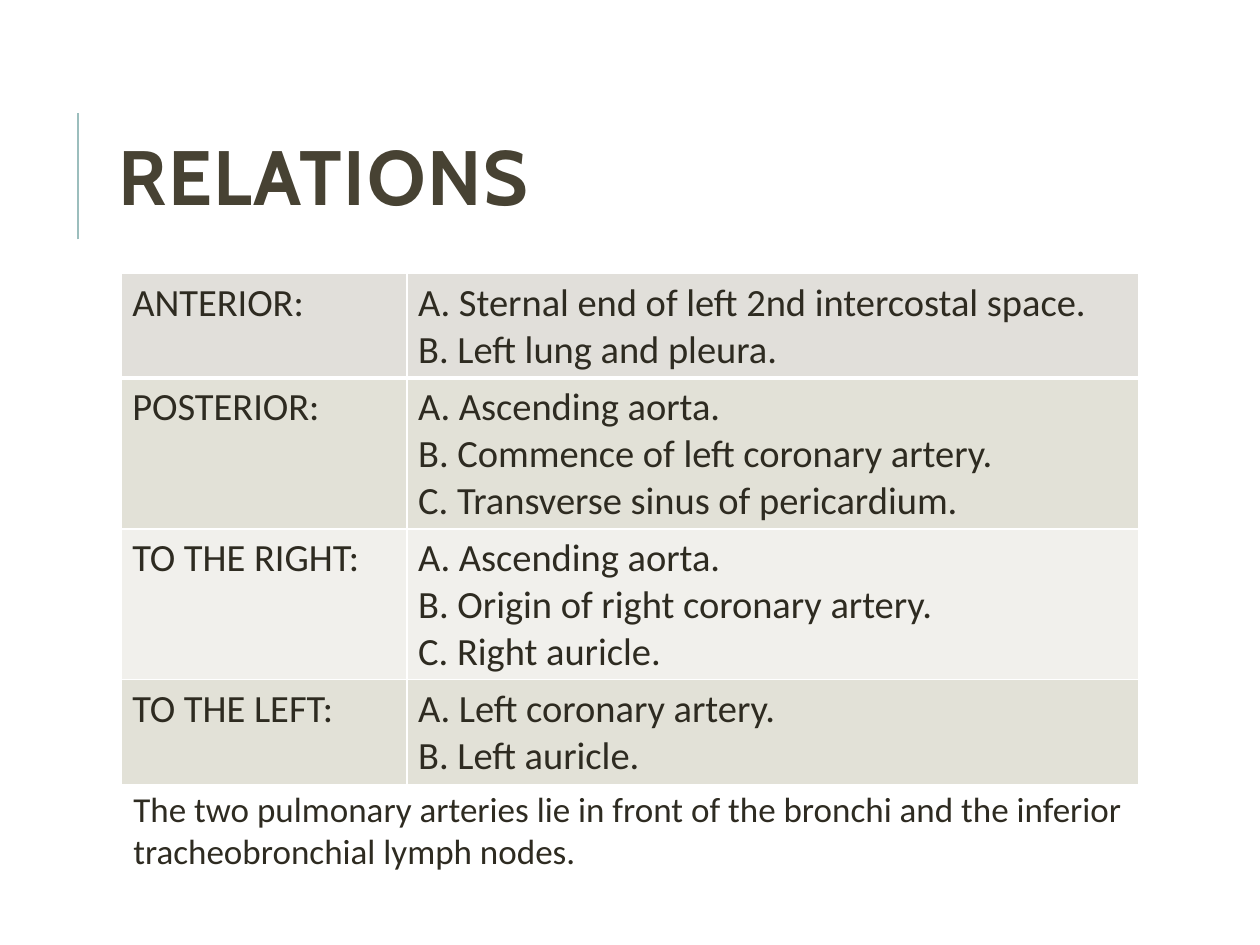
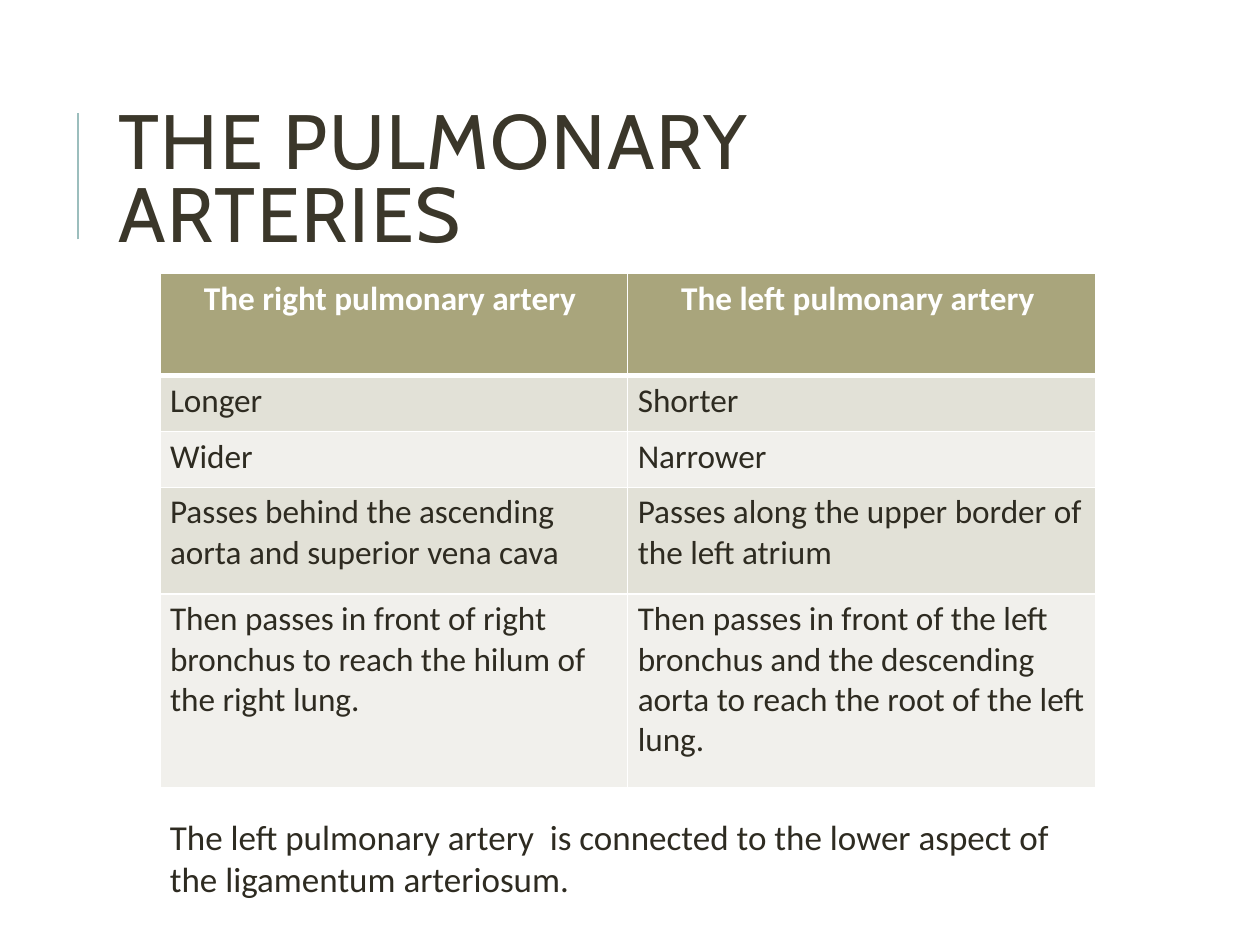
"""Build two slides on the relations and comparison of the pulmonary arteries."""
from dataclasses import dataclass

from lxml import etree
from pptx import Presentation
from pptx.dml.color import RGBColor
from pptx.enum.shapes import MSO_CONNECTOR
from pptx.enum.text import MSO_ANCHOR, PP_ALIGN
from pptx.oxml.ns import qn
from pptx.util import Pt

STRAIGHT = MSO_CONNECTOR.STRAIGHT
TOP, MIDDLE = MSO_ANCHOR.TOP, MSO_ANCHOR.MIDDLE
LEFT, CENTER = PP_ALIGN.LEFT, PP_ALIGN.CENTER


@dataclass(frozen=True)
class Theme:
    """Colours, fonts and type sizes of the deck."""
    ink: str = "2E2B21"
    white: str = "FFFFFF"
    accent: str = "9CBEBD"
    title_bold: str = "474233"
    title_plain: str = "3B372A"
    olive: str = "A9A57C"
    stone: str = "E1DFDA"
    band_dark: str = "E2E1D7"
    band_light: str = "F1F0EC"
    title_font: str = "Cabin"
    body_font: str = "Calibri"
    title_size: float = 44
    note_size: float = 20


THEME = Theme()


@dataclass(frozen=True)
class Box:
    """A position and size in points."""
    left: float
    top: float
    width: float
    height: float


@dataclass(frozen=True)
class Grid:
    """A banded table whose cells hold lines of text."""
    left: float
    columns: list[float]
    heights: list[float]
    rows: list[tuple[str, str]]
    size: float
    inset_x: float
    inset_y: float
    first_fill: str
    headed: bool


@dataclass(frozen=True)
class Page:
    """The content of one slide."""
    title: str
    title_color: str
    title_is_bold: bool
    grid: Grid
    note: str
    note_box: Box


TITLE_BOX = Box(60.5, 46, 574, 118)
GRID_TOP = 156.3
RULE_X, RULE_TOP, RULE_BOTTOM = 44.6, 64.8, 136.8
THIN, THICK = 1, 3

PAGES = [
    Page(
        "RELATIONS", THEME.title_bold, True,
        Grid(
            69.1, [163.4, 418.3], [59, 85, 85, 59],
            [
                ("ANTERIOR:", "A. Sternal end of left 2nd intercostal space.\n"
                              "B. Left lung and pleura."),
                ("POSTERIOR:", "A. Ascending aorta.\n"
                               "B. Commence of left coronary artery.\n"
                               "C. Transverse sinus of pericardium."),
                ("TO THE RIGHT:", "A. Ascending aorta.\n"
                                  "B. Origin of right coronary artery.\n"
                                  "C. Right auricle."),
                ("TO THE LEFT:", "A. Left coronary artery.\nB. Left auricle."),
            ],
            22, 6.5, 3.5, THEME.stone, False),
        "The two pulmonary arteries lie in front of the bronchi and the inferior "
        "tracheobronchial lymph nodes.",
        Box(69.1, 446.4, 581.8, 55.4)),
    Page(
        "THE PULMONARY ARTERIES", THEME.title_plain, False,
        Grid(
            91.4, [267.3, 267.3], [58.3, 32, 32, 61, 110.9],
            [
                ("The right pulmonary artery ", "The left pulmonary artery "),
                ("Longer", "Shorter"),
                ("Wider", "Narrower"),
                ("Passes behind the ascending aorta and superior vena cava",
                 "Passes along the upper border of the left atrium"),
                ("Then passes in front of right bronchus to reach the hilum of "
                 "the right lung.",
                 "Then passes in front of the left bronchus and the descending "
                 "aorta to reach the root of the left lung."),
            ],
            19, 5.8, 2.9, THEME.olive, True),
        "The left pulmonary artery  is connected to the lower aspect of the "
        "ligamentum arteriosum.",
        Box(90, 462.2, 544.3, 55.4)),
]


def write(frame, text: str, *, size: float, color: str = THEME.ink,
          font: str = THEME.body_font, bold: bool = False, align=LEFT,
          line_spacing: float | None = None, tracking: float = 0) -> None:
    """Fill a text frame with one formatted paragraph per line."""
    frame.word_wrap = True
    for index, line in enumerate(text.split("\n")):
        paragraph = frame.add_paragraph() if index else frame.paragraphs[0]
        paragraph.alignment = align
        if line_spacing:
            paragraph.line_spacing = line_spacing
        run = paragraph.add_run()
        run.text = line
        run.font.name = font
        run.font.size = Pt(size)
        run.font.bold = bold
        run.font.color.rgb = RGBColor.from_string(color)
        if tracking:
            run.font._element.set("spc", str(round(tracking * 100)))


def add_text(slide, box: Box, text: str, *, anchor=TOP, **style) -> None:
    """Place formatted text in a box."""
    frame = slide.shapes.add_textbox(
        Pt(box.left), Pt(box.top), Pt(box.width), Pt(box.height)).text_frame
    frame.vertical_anchor = anchor
    write(frame, text, **style)


def add_title_rule(slide) -> None:
    """Draw the vertical line beside the title."""
    rule = slide.shapes.add_connector(
        STRAIGHT, Pt(RULE_X), Pt(RULE_BOTTOM), Pt(RULE_X), Pt(RULE_TOP))
    rule.line.color.rgb = RGBColor.from_string(THEME.accent)
    rule.line.width = Pt(1.5)
    etree.SubElement(rule._element.spPr, qn("a:effectLst"))


def set_borders(cell, top: float, bottom: float) -> None:
    """Give a cell white borders, thin at the sides."""
    properties = cell._tc.get_or_add_tcPr()
    widths = {"a:lnL": THIN, "a:lnR": THIN, "a:lnT": top, "a:lnB": bottom}
    for position, (tag, width) in enumerate(widths.items()):
        border = etree.Element(qn(tag), w=str(Pt(width)))
        fill = etree.SubElement(border, qn("a:solidFill"))
        etree.SubElement(fill, qn("a:srgbClr"), val=THEME.white)
        properties.insert(position, border)


def add_grid(slide, grid: Grid) -> None:
    """Draw a banded table with a thick line below its first row."""
    table = slide.shapes.add_table(
        len(grid.rows), len(grid.columns), Pt(grid.left), Pt(GRID_TOP),
        Pt(sum(grid.columns)), Pt(sum(grid.heights))).table
    table.first_row = grid.headed
    for column, width in zip(table.columns, grid.columns):
        column.width = Pt(width)
    for index, (height, texts) in enumerate(zip(grid.heights, grid.rows)):
        table.rows[index].height = Pt(height)
        is_header = grid.headed and index == 0
        band = THEME.band_dark if index % 2 else THEME.band_light
        for cell, text in zip(table.rows[index].cells, texts):
            cell.margin_left = cell.margin_right = Pt(grid.inset_x)
            cell.margin_top = cell.margin_bottom = Pt(grid.inset_y)
            cell.fill.solid()
            cell.fill.fore_color.rgb = RGBColor.from_string(
                band if index else grid.first_fill)
            set_borders(cell, THICK if index == 1 else THIN,
                        THICK if index == 0 else THIN)
            write(cell.text_frame, text, size=grid.size, bold=is_header,
                  color=THEME.white if is_header else THEME.ink,
                  align=CENTER if is_header else LEFT)


def add_page(deck, page: Page) -> None:
    """Add one slide with its title, table and note."""
    slide = deck.slides.add_slide(deck.slide_layouts[6])
    add_title_rule(slide)
    add_text(slide, TITLE_BOX, page.title, anchor=MIDDLE, size=THEME.title_size,
             color=page.title_color, font=THEME.title_font,
             bold=page.title_is_bold, line_spacing=0.8, tracking=1)
    add_grid(slide, page.grid)
    add_text(slide, page.note_box, page.note, size=THEME.note_size)


def main() -> None:
    """Build and save the deck."""
    deck = Presentation()
    deck.slide_width, deck.slide_height = Pt(720), Pt(540)
    for page in PAGES:
        add_page(deck, page)
    deck.save("out.pptx")


if __name__ == "__main__":
    main()
